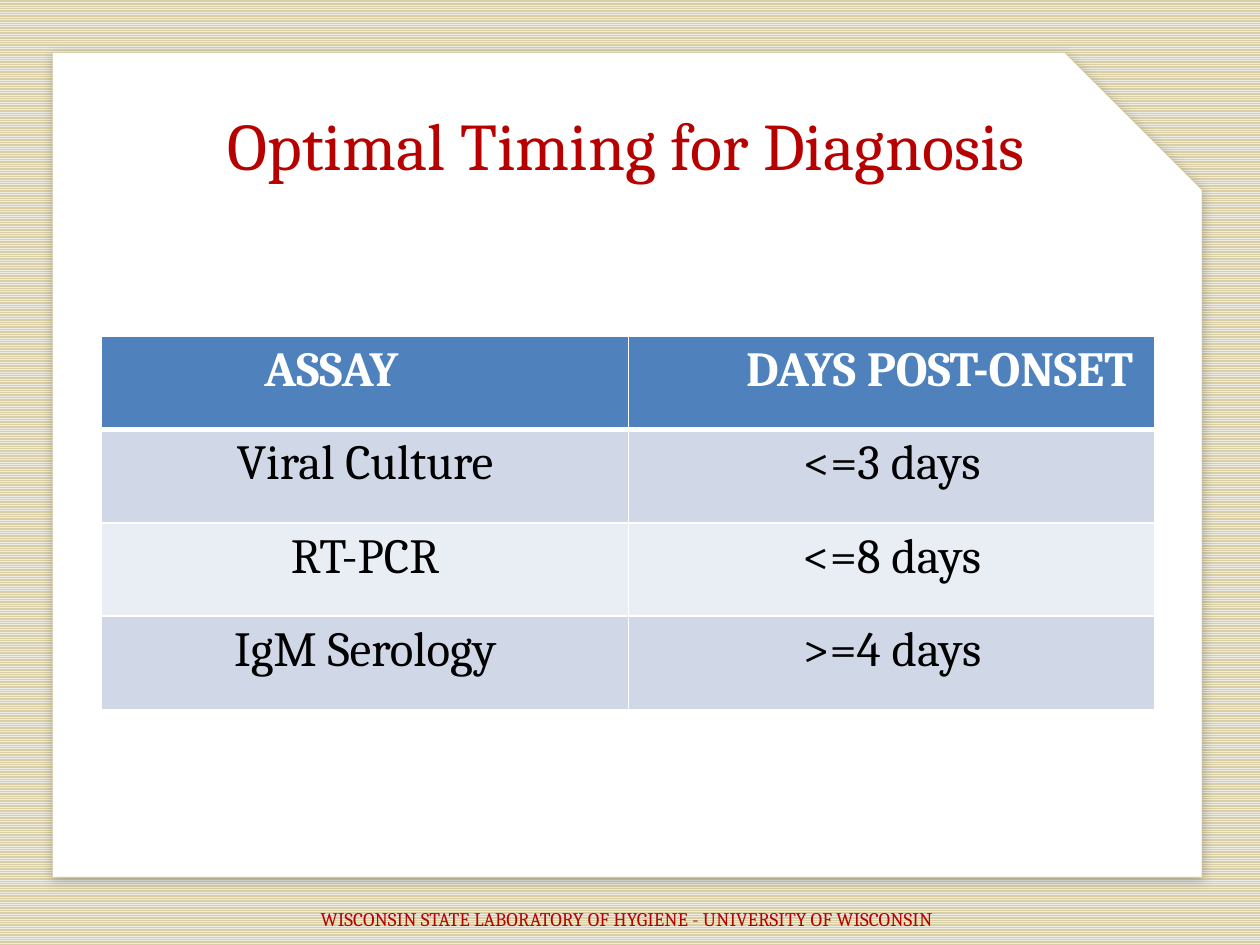
from dataclasses import dataclass

from lxml.etree import SubElement
from pptx import Presentation
from pptx.dml.color import RGBColor as RGB
from pptx.enum.dml import MSO_PATTERN
from pptx.enum.text import MSO_ANCHOR as ANCHOR, MSO_AUTO_SIZE, PP_ALIGN as ALIGN
from pptx.oxml import parse_xml
from pptx.oxml.ns import nsdecls, qn
from pptx.util import Cm, Pt


@dataclass(frozen=True)
class Theme:
    font: str = "Cambria"
    title_size: int = 38
    table_size: int = 28
    footer_size: int = 11
    accent: str = "B70000"
    text: str = "000000"
    white: str = "FFFFFF"
    header: str = "4F81BD"
    bands: tuple = ("D0D8E8", "E9EDF4")
    stripe: str = "EEECE1"
    backdrop: str = "D8CFA7"


class SlideBuilder:
    def __init__(self, slide, theme):
        self.slide = slide
        self.theme = theme

    def background(self):
        fill = self.slide.background.fill
        fill.patterned()
        fill.pattern = MSO_PATTERN.NARROW_HORIZONTAL
        fill.fore_color.rgb = RGB.from_string(self.theme.stripe)
        fill.back_color.rgb = RGB.from_string(self.theme.backdrop)

    def format(self, p, size, color, bold=False, align=ALIGN.CENTER):
        p.alignment = align
        p.font.name = self.theme.font
        p.font.size = Pt(size)
        p.font.bold = bold
        p.font.color.rgb = RGB.from_string(color)

    def card(self, left, top, right, bottom, cut):
        """Draw the white sheet with its top right corner cut off."""
        corners = [(right - cut, top), (right, top + cut), (right, bottom), (left, bottom)]
        builder = self.slide.shapes.build_freeform(Cm(left), Cm(top))
        builder.add_line_segments([(Cm(x), Cm(y)) for x, y in corners], close=True)
        sp = builder.convert_to_shape()
        sp.fill.solid()
        sp.fill.fore_color.rgb = RGB.from_string(self.theme.white)
        sp.line.color.rgb = RGB.from_string(self.theme.backdrop)
        sp.line.width = Pt(0.25)
        sp.shadow.inherit = False
        effects = sp._element.spPr.find(qn("a:effectLst"))
        shadow = SubElement(effects, qn("a:outerShdw"), blurRad=str(Pt(6)),
                            dist=str(Pt(2)), dir=str(80 * 60000))
        color = SubElement(shadow, qn("a:srgbClr"), val="000000")
        SubElement(color, qn("a:alpha"), val="22000")
        # The title placeholder already exists, so the sheet goes behind it.
        self.slide.shapes.title._element.addprevious(sp._element)

    def title(self, text, left, top, width, height):
        sp = self.slide.shapes.title
        sp.left, sp.top, sp.width, sp.height = map(Cm, (left, top, width, height))
        tf = sp.text_frame
        tf.text = text
        tf.auto_size = MSO_AUTO_SIZE.NONE
        tf.vertical_anchor = ANCHOR.TOP
        tf.margin_left = tf.margin_top = tf.margin_right = tf.margin_bottom = 0
        self.format(tf.paragraphs[0], self.theme.title_size, self.theme.accent)

    def footer(self, text, left, top, width, height):
        tf = self.slide.shapes.add_textbox(*map(Cm, (left, top, width, height))).text_frame
        tf.word_wrap = True
        tf.vertical_anchor = ANCHOR.MIDDLE
        tf.text = text
        self.format(tf.paragraphs[0], self.theme.footer_size, self.theme.accent)

    def borders(self, cell, top, bottom):
        """Rule a cell in white; top and bottom are widths in points."""
        widths = {"lnL": 1, "lnR": 1, "lnT": top, "lnB": bottom}
        for i, (tag, width) in enumerate(widths.items()):
            line = parse_xml(
                f'<a:{tag} {nsdecls("a")} w="{Pt(width)}"><a:solidFill>'
                f'<a:srgbClr val="{self.theme.white}"/></a:solidFill></a:{tag}>')
            cell._tc.get_or_add_tcPr().insert(i, line)

    def table(self, rows, left, top, col_width, row_height, header_format):
        """header_format holds the alignment and left margin of each header cell."""
        th = self.theme
        n_rows, n_cols = len(rows), len(rows[0])
        table = self.slide.shapes.add_table(
            n_rows, n_cols, Cm(left), Cm(top),
            Cm(col_width * n_cols), Cm(row_height * n_rows)).table
        for col in table.columns:
            col.width = Cm(col_width)
        for i, row in enumerate(rows):
            table.rows[i].height = Cm(row_height)
            for j, text in enumerate(row):
                cell = table.cell(i, j)
                cell.text = text
                p = cell.text_frame.paragraphs[0]
                if i == 0:
                    align, margin = header_format[j]
                    cell.margin_left = Cm(margin)
                    self.format(p, th.table_size, th.white, True, align)
                    fill = th.header
                else:
                    self.format(p, th.table_size, th.text)
                    fill = th.bands[(i - 1) % 2]
                cell.fill.solid()
                cell.fill.fore_color.rgb = RGB.from_string(fill)
                self.borders(cell, 3 if i == 1 else 1, 3 if i == 0 else 1)


def main():
    prs = Presentation()
    prs.slide_width, prs.slide_height = Cm(25.4), Cm(19.05)
    s = SlideBuilder(prs.slides.add_slide(prs.slide_layouts[5]), Theme())
    s.background()
    s.card(1.06, 1.06, 24.23, 17.68, cut=2.77)
    s.title("Optimal Timing for Diagnosis", 1.06, 2.1, 23.14, 3.48)
    s.table(
        [("ASSAY", "DAYS POST-ONSET"),
         ("Viral Culture", "<=3 days"),
         ("RT-PCR", "<=8 days"),
         ("IgM Serology", ">=4 days")],
        left=2.05, top=6.78, col_width=10.62, row_height=1.88,
        header_format=[(ALIGN.LEFT, 3.28), (ALIGN.CENTER, 2.18)])
    s.footer("WISCONSIN STATE LABORATORY OF HYGIENE - UNIVERSITY OF WISCONSIN",
             1.06, 18.01, 23.16, 1.02)
    prs.save("out.pptx")


if __name__ == "__main__":
    main()
